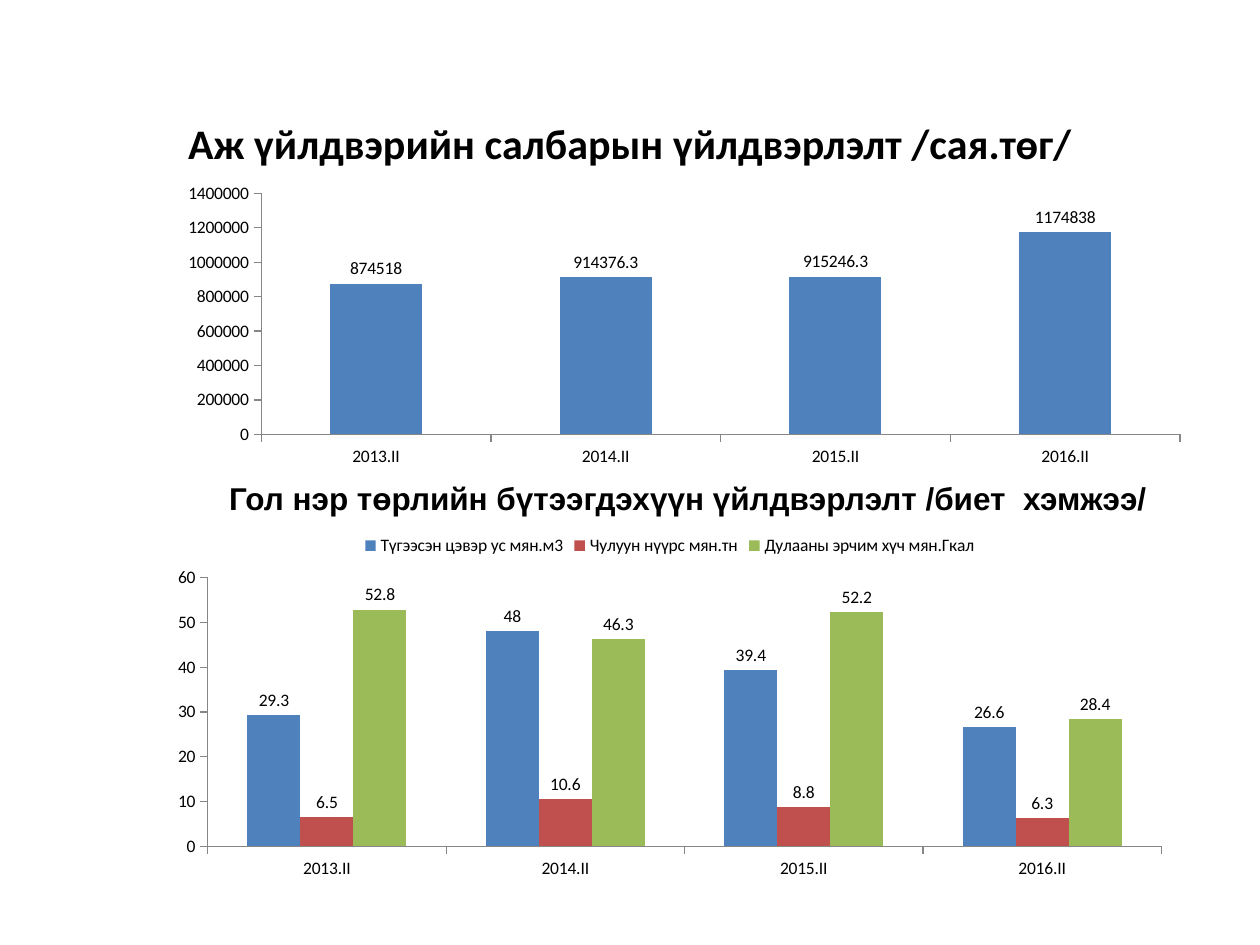
from pptx import Presentation
from pptx.chart.data import CategoryChartData
from pptx.dml.color import RGBColor
from pptx.enum.chart import (XL_CHART_TYPE as CT, XL_LABEL_POSITION as LabelPos,
                             XL_LEGEND_POSITION as LegendPos, XL_TICK_MARK as Tick)
from pptx.enum.text import MSO_ANCHOR as Anchor, PP_ALIGN as Align
from pptx.util import Inches, Pt

COLORS = {"text": "000000", "axis": "868686",
          "blue": "4F81BD", "red": "C0504D", "green": "9BBB59"}

# text, box, font, size, alignment, anchor
HEADINGS = [
    ("Аж үйлдвэрийн салбарын үйлдвэрлэлт /сая.төг/",
     (0.5, 0.78, 9, 0.7), "Calibri", 24, Align.CENTER, Anchor.MIDDLE),
    ("Гол нэр төрлийн бүтээгдэхүүн үйлдвэрлэлт /биет  хэмжээ/",
     (1.72, 3.75, 8.05, 0.4), "Arial", 18, Align.LEFT, Anchor.TOP),
]

PERIODS = ["2013.II", "2014.II", "2015.II", "2016.II"]

# box, top of scale, scale step, legend shown, series
CHARTS = [
    ((1.33, 1.41, 8.2, 2.34), 1400000, 200000, False, [
        ("Series 1", (874518, 914376.3, 915246.3, 1174838), "blue"),
    ]),
    ((1.25, 4.14, 8.13, 2.89), 60, 10, True, [
        ("Түгээсэн цэвэр ус мян.м3", (29.3, 48, 39.4, 26.6), "blue"),
        ("Чулуун нүүрс мян.тн", (6.5, 10.6, 8.8, 6.3), "red"),
        ("Дулааны эрчим хүч мян.Гкал", (52.8, 46.3, 52.2, 28.4), "green"),
    ]),
]


def rgb(name):
    return RGBColor.from_string(COLORS[name])


def inches(box):
    return [Inches(v) for v in box]


def style_font(font, name, size, bold=False):
    font.name, font.size, font.bold = name, Pt(size), bold
    font.color.rgb = rgb("text")


def add_heading(s, text, box, font, size, align, anchor):
    tf = s.shapes.add_textbox(*inches(box)).text_frame
    tf.word_wrap = True
    tf.vertical_anchor = anchor
    tf.text = text
    p = tf.paragraphs[0]
    p.alignment = align
    style_font(p.runs[0].font, font, size, bold=True)


def add_column_chart(s, box, top, step, has_legend, series):
    data = CategoryChartData(number_format="General")
    data.categories = PERIODS
    for name, values, _ in series:
        data.add_series(name, values)
    chart = s.shapes.add_chart(CT.COLUMN_CLUSTERED, *inches(box), data).chart
    style_font(chart.font, "Calibri", 10)
    chart.has_title = False
    chart.has_legend = has_legend
    if has_legend:
        chart.legend.position = LegendPos.TOP
        chart.legend.include_in_layout = False

    for axis in (chart.category_axis, chart.value_axis):
        axis.has_major_gridlines = False
        axis.major_tick_mark = Tick.OUTSIDE
        axis.minor_tick_mark = Tick.NONE
        axis.format.line.color.rgb = rgb("axis")
    scale = chart.value_axis
    scale.minimum_scale, scale.maximum_scale, scale.major_unit = 0, top, step

    plot = chart.plots[0]
    plot.vary_by_categories = False
    plot.gap_width, plot.overlap = 150, 0
    for ser, (_, _, color) in zip(plot.series, series):
        ser.format.fill.solid()
        ser.format.fill.fore_color.rgb = rgb(color)
        ser.data_labels.show_value = True
        ser.data_labels.position = LabelPos.OUTSIDE_END


prs = Presentation()
prs.slide_width, prs.slide_height = Inches(10), Inches(7.5)
s = prs.slides.add_slide(prs.slide_layouts[6])
for heading in HEADINGS:
    add_heading(s, *heading)
for chart_args in CHARTS:
    add_column_chart(s, *chart_args)
prs.save("out.pptx")
